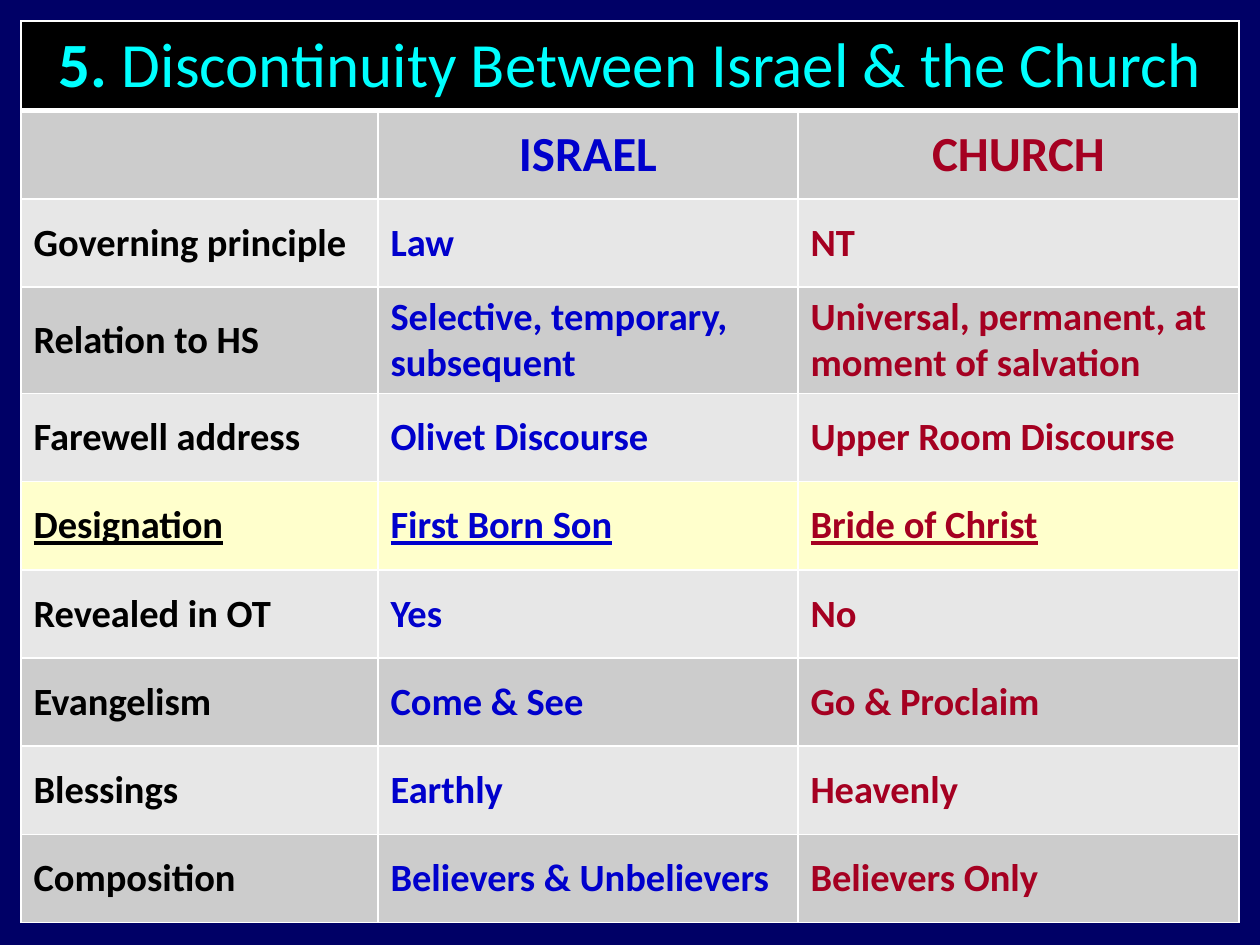
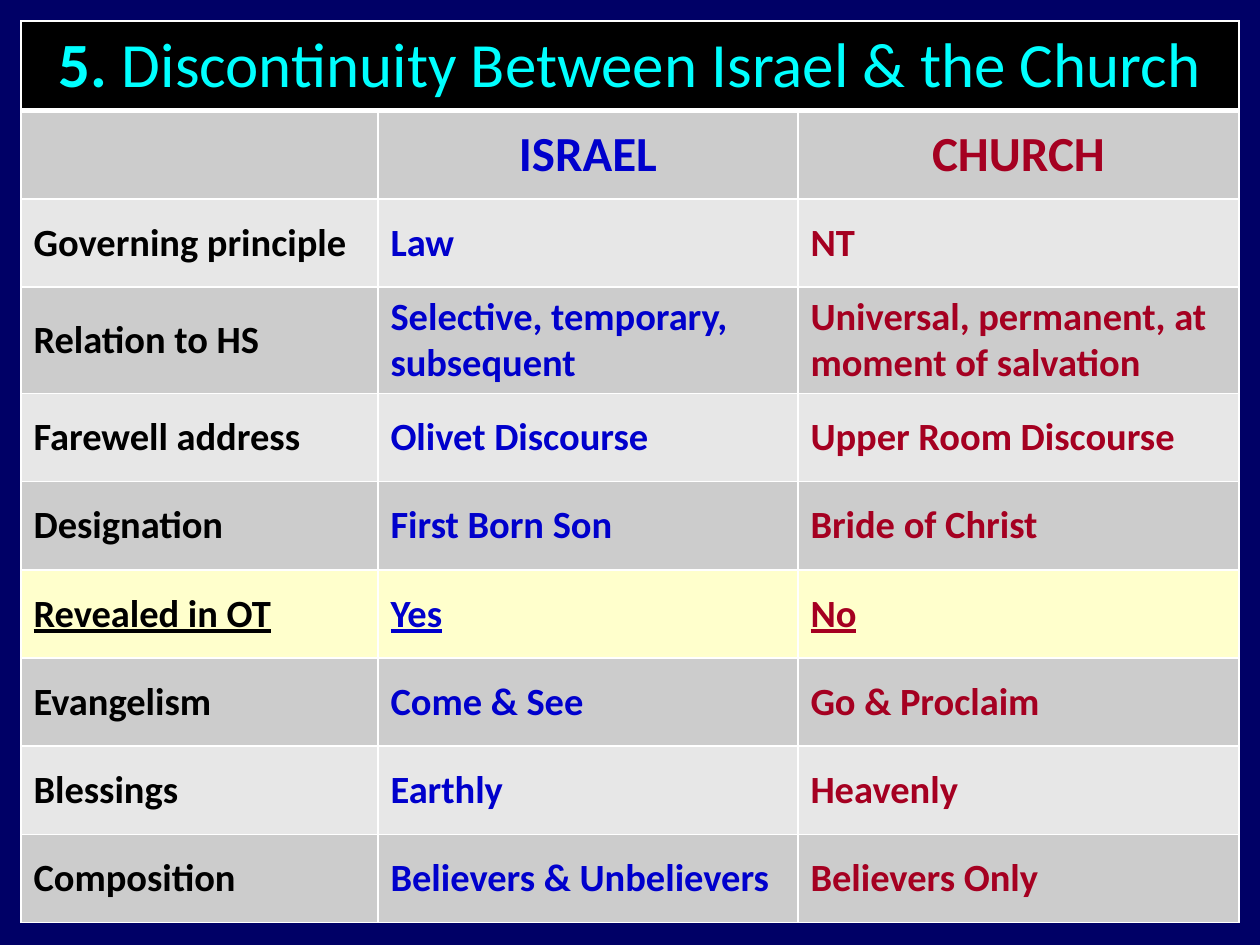
import pptx
import pptx.util
import pptx.dml.color
import pptx.enum.text
import pptx.oxml.ns
import lxml.etree

FONT = "Calibri"
NAVY, BLACK, WHITE, CYAN = "000066", "000000", "FFFFFF", "00FFFF"
BLUE, RED = "0000CC", "A50021"
DARK, LIGHT, YELLOW = "CCCCCC", "E7E7E7", "FFFFCC"
COLUMN_COLORS = [BLACK, BLUE, RED]
COLUMN_UNITS = [17, 20, 21]
ROW_UNITS = 4.2
UNITS_ACROSS = 60

TITLE = [("5. ", True), ("Discontinuity Between Israel & the Church", False)]
HEADINGS = ["", "ISRAEL", "CHURCH"]
CONTRASTS = [
    ("Governing principle", "Law", "NT"),
    ("Relation to HS", "Selective, temporary, subsequent",
     "Universal, permanent, at moment of salvation"),
    ("Farewell address", "Olivet Discourse", "Upper Room Discourse"),
    ("Designation", "First Born Son", "Bride of Christ"),
    ("Revealed in OT", "Yes", "No"),
    ("Evangelism", "Come & See", "Go & Proclaim"),
    ("Blessings", "Earthly", "Heavenly"),
    ("Composition", "Believers & Unbelievers", "Believers Only"),
]
HIGHLIGHTS = ["Designation", "Revealed in OT"]


def rgb(color):
    return pptx.dml.color.RGBColor.from_string(color)


def add_text(p, text, size=22, color=BLACK, bold=True, underline=None, center=False):
    if center:
        p.alignment = pptx.enum.text.PP_ALIGN.CENTER
    r = p.add_run()
    r.text = text
    r.font.name = FONT
    r.font.size = pptx.util.Pt(size)
    r.font.bold = bold
    r.font.underline = underline
    r.font.color.rgb = rgb(color)


def set_borders(cell, top=1, bottom=1):
    tcPr = cell._tc.get_or_add_tcPr()
    for side, width in (("L", 1), ("R", 1), ("T", top), ("B", bottom)):
        ln = lxml.etree.SubElement(tcPr, pptx.oxml.ns.qn("a:ln" + side),
                                   w=str(pptx.util.Pt(width)))
        fill = lxml.etree.SubElement(ln, pptx.oxml.ns.qn("a:solidFill"))
        lxml.etree.SubElement(fill, pptx.oxml.ns.qn("a:srgbClr"), val=WHITE)


def style_cell(cell, fill, **borders):
    set_borders(cell, **borders)
    cell.fill.solid()
    cell.fill.fore_color.rgb = rgb(fill)
    cell.vertical_anchor = pptx.enum.text.MSO_ANCHOR.MIDDLE


def fill_title(table):
    for cell in table.rows[0].cells:
        style_cell(cell, BLACK, bottom=3)
    title = table.cell(0, 0)
    title.merge(table.cell(0, len(COLUMN_UNITS) - 1))
    for text, bold in TITLE:
        add_text(title.text_frame.paragraphs[0], text, size=36, color=CYAN,
                 bold=bold, center=True)


def fill_headings(table):
    for cell, text, color in zip(table.rows[1].cells, HEADINGS, COLUMN_COLORS):
        style_cell(cell, DARK, top=3)
        if text:
            add_text(cell.text_frame.paragraphs[0], text, size=28, color=color, center=True)


def fill_contrasts(table, highlight):
    for i, texts in enumerate(CONTRASTS):
        chosen = texts[0] == highlight
        fill = YELLOW if chosen else (LIGHT, DARK)[i % 2]
        for cell, text, color in zip(table.rows[i + 2].cells, texts, COLUMN_COLORS):
            style_cell(cell, fill)
            add_text(cell.text_frame.paragraphs[0], text, color=color,
                     underline=chosen or None)


def add_comparison(s, left, top, unit, highlight):
    row_count = len(CONTRASTS) + 2
    row_height = int(ROW_UNITS * unit)
    table = s.shapes.add_table(row_count, len(COLUMN_UNITS), left, top,
                               sum(COLUMN_UNITS) * unit, row_count * row_height).table
    table.first_row = table.horz_banding = False
    for column, units in zip(table.columns, COLUMN_UNITS):
        column.width = units * unit
    for row in table.rows:
        row.height = row_height
    fill_title(table)
    fill_headings(table)
    fill_contrasts(table, highlight)


def add_comparison_slide(prs, highlight):
    s = prs.slides.add_slide(prs.slide_layouts[6])
    s.background.fill.solid()
    s.background.fill.fore_color.rgb = rgb(NAVY)
    unit = prs.slide_width // UNITS_ACROSS
    add_comparison(s, unit, unit, unit, highlight)


def main():
    prs = pptx.Presentation()
    prs.slide_width = pptx.util.Inches(10)
    prs.slide_height = pptx.util.Inches(7.5)
    for highlight in HIGHLIGHTS:
        add_comparison_slide(prs, highlight)
    prs.save("out.pptx")


if __name__ == "__main__":
    main()
